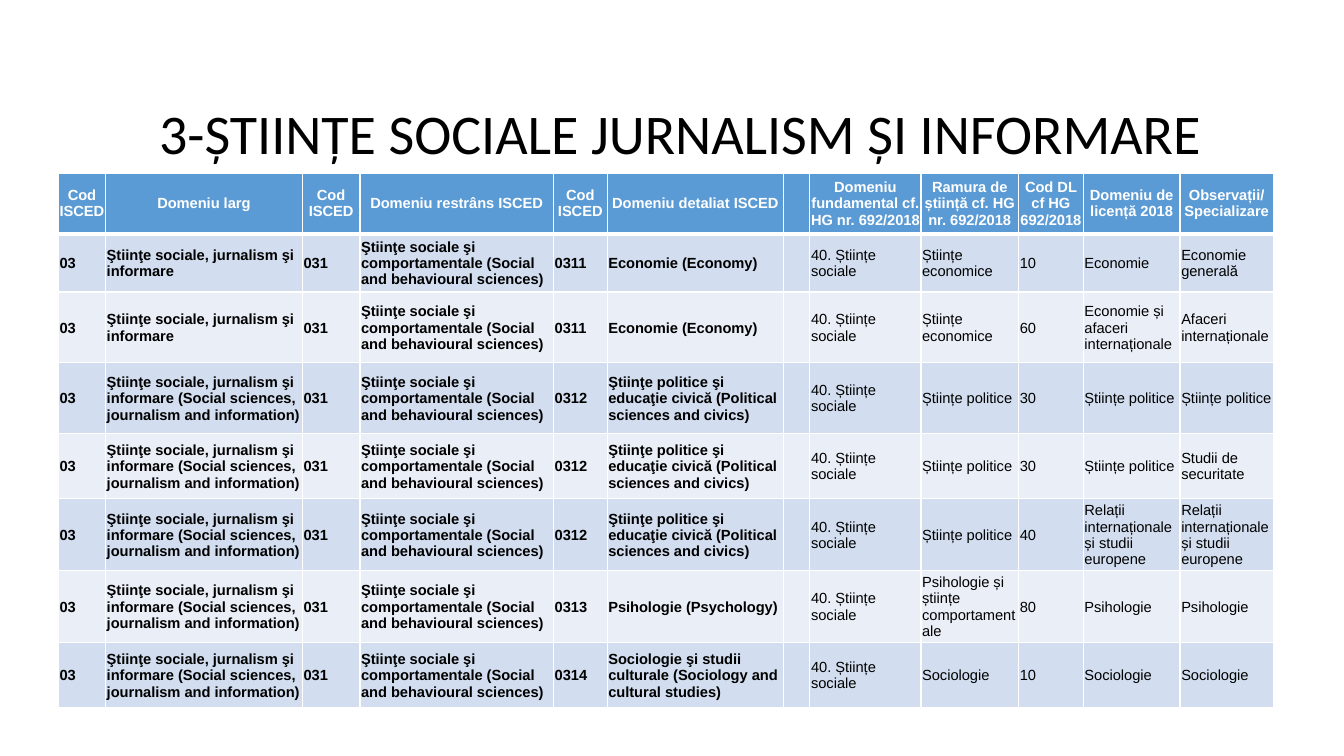
from lxml import etree
from pptx import Presentation
from pptx.dml.color import RGBColor
from pptx.enum.text import MSO_ANCHOR, PP_ALIGN
from pptx.oxml.ns import qn
from pptx.util import Cm, Pt

MIDDLE = MSO_ANCHOR.MIDDLE
LEFT, CENTER, JUSTIFY = PP_ALIGN.LEFT, PP_ALIGN.CENTER, PP_ALIGN.JUSTIFY

BLACK = RGBColor(0x00, 0x00, 0x00)
WHITE = RGBColor(0xFF, 0xFF, 0xFF)
HEADER_BLUE = RGBColor(0x5B, 0x9B, 0xD5)
BAND_COLORS = (RGBColor(0xD2, 0xDE, 0xEF), RGBColor(0xEA, 0xEF, 0xF7))

# Content
TITLE = "3-ȘTIINȚE SOCIALE JURNALISM ȘI INFORMARE "
HEADERS = (
    "Cod ISCED", "Domeniu larg", "Cod ISCED", "Domeniu restrâns ISCED",
    "Cod ISCED", "Domeniu detaliat ISCED", "",
    "Domeniu fundamental cf. HG nr. 692/2018",
    "Ramura de știință cf. HG nr. 692/2018", "Cod DL cf HG 692/2018",
    "Domeniu de licență 2018", "Observații/ Specializare",
)
BROAD_SHORT = "Ştiinţe sociale, jurnalism şi informare"
BROAD_FULL = BROAD_SHORT + " (Social sciences, journalism and information)"
NARROW = "Ştiinţe sociale şi comportamentale (Social and behavioural sciences)"
FUNDAMENTAL = "40. Științe sociale"
ECONOMICS = "Economie (Economy)"
POLITICS = "Ştiinţe politice şi educaţie civică (Political sciences and civics)"
RELATIONS = "Relații internaționale și studii europene"

# Broad field, detailed code, detailed field, branch, degree code, degree, remarks
FIELDS = (
    (BROAD_SHORT, "0311", ECONOMICS,
     "Științe economice", "10", "Economie", "Economie generală"),
    (BROAD_SHORT, "0311", ECONOMICS, "Științe economice", "60",
     "Economie și afaceri internaționale", "Afaceri internaționale"),
    (BROAD_FULL, "0312", POLITICS,
     "Științe politice", "30", "Științe politice", "Științe politice"),
    (BROAD_FULL, "0312", POLITICS,
     "Științe politice", "30", "Științe politice", "Studii de securitate"),
    (BROAD_FULL, "0312", POLITICS,
     "Științe politice", "40", RELATIONS, RELATIONS),
    (BROAD_FULL, "0313", "Psihologie (Psychology)",
     "Psihologie și științe comportamentale", "80", "Psihologie", "Psihologie"),
    (BROAD_FULL, "0314",
     "Sociologie şi studii culturale (Sociology and cultural studies)",
     "Sociologie", "10", "Sociologie", "Sociologie"),
)

# Layout in centimetres
COLUMN_WIDTHS = (1.19, 4.96, 1.45, 4.88, 1.35, 4.45,
                 0.66, 2.8, 2.46, 1.63, 2.44, 2.35)
ROW_HEIGHTS = (1.52, 1.47, 1.78, 1.78, 1.65, 1.65, 1.65, 1.65)
TABLE_LEFT, TABLE_TOP = 1.47, 4.37
BODY_MARGIN = 0.03
GAP_COLUMN = 6
CODE_COLUMNS = (2, 4)
FIRST_JUSTIFIED_ROW = 3


def set_borders(cell, bottom_width):
    properties = cell._tc.get_or_add_tcPr()
    for side in ("L", "R", "T", "B"):
        width = bottom_width if side == "B" else 1
        line = etree.SubElement(properties, qn(f"a:ln{side}"), w=str(Pt(width)))
        fill = etree.SubElement(line, qn("a:solidFill"))
        etree.SubElement(fill, qn("a:srgbClr"), val=str(WHITE))


def format_cell(cell, text, fill_color, font_color, bold, alignment, margin):
    cell.text_frame.text = text
    cell.vertical_anchor = MIDDLE
    cell.margin_left = cell.margin_right = cell.margin_top = Cm(margin)
    cell.margin_bottom = 0
    cell.fill.solid()
    cell.fill.fore_color.rgb = fill_color
    paragraph = cell.text_frame.paragraphs[0]
    paragraph.alignment = alignment
    font = paragraph.font
    for run in paragraph.runs:
        font = run.font
    font.name = "Arial"
    font.size = Pt(10.5)
    font.bold = bold
    font.color.rgb = font_color


def add_title(slide):
    title = slide.shapes.add_textbox(Cm(2.69), Cm(2.51), Cm(29.21), Cm(1.83))
    frame = title.text_frame
    frame.word_wrap = True
    frame.vertical_anchor = MIDDLE
    frame.text = TITLE
    paragraph = frame.paragraphs[0]
    paragraph.alignment = CENTER
    paragraph.line_spacing = 0.9
    font = paragraph.runs[0].font
    font.name = "Calibri"
    font.size = Pt(40)
    font.color.rgb = BLACK


def add_field_table(slide):
    rows = [HEADERS]
    for broad, code, detailed, *degree in FIELDS:
        rows.append(("03", broad, "031", NARROW, code, detailed, "",
                     FUNDAMENTAL, *degree))

    table = slide.shapes.add_table(
        len(rows), len(HEADERS), Cm(TABLE_LEFT), Cm(TABLE_TOP),
        Cm(sum(COLUMN_WIDTHS)), Cm(sum(ROW_HEIGHTS))).table
    for column, width in zip(table.columns, COLUMN_WIDTHS):
        column.width = Cm(width)
    for row, height in zip(table.rows, ROW_HEIGHTS):
        row.height = Cm(height)

    for row_index, texts in enumerate(rows):
        for column_index, text in enumerate(texts):
            cell = table.cell(row_index, column_index)
            if row_index == 0:
                set_borders(cell, 3)
                format_cell(cell, text, HEADER_BLUE, WHITE, True, CENTER, 0)
                continue
            justified = (row_index >= FIRST_JUSTIFIED_ROW
                         and column_index in CODE_COLUMNS)
            set_borders(cell, 1)
            format_cell(cell, text, BAND_COLORS[(row_index - 1) % 2], BLACK,
                        column_index < GAP_COLUMN,
                        JUSTIFY if justified else LEFT, BODY_MARGIN)


def main():
    presentation = Presentation()
    presentation.slide_width = Cm(33.87)
    presentation.slide_height = Cm(19.05)
    slide = presentation.slides.add_slide(presentation.slide_layouts[6])
    add_title(slide)
    add_field_table(slide)
    presentation.save("out.pptx")


if __name__ == "__main__":
    main()
